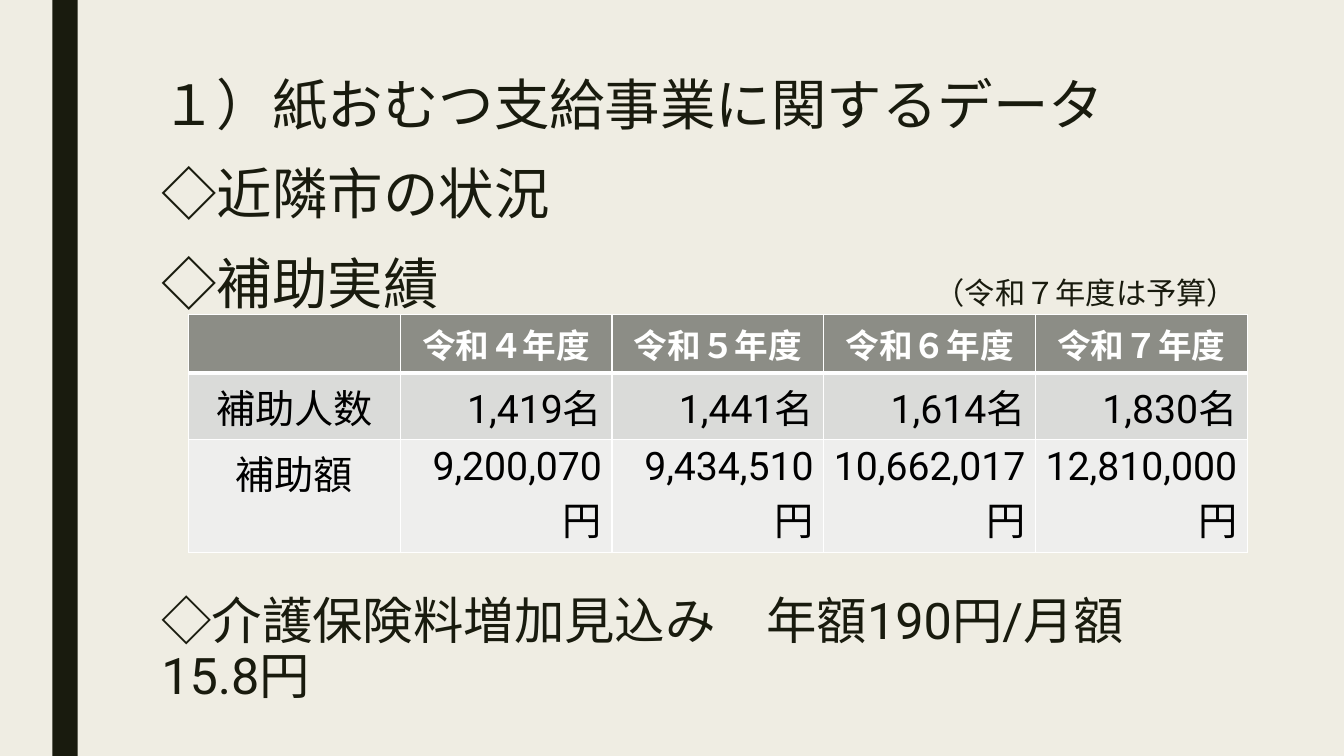
from lxml import etree
from pptx import Presentation
from pptx.dml.color import RGBColor
from pptx.enum.shapes import MSO_SHAPE
from pptx.enum.text import MSO_ANCHOR, PP_ALIGN
from pptx.oxml.ns import qn
from pptx.util import Inches, Pt

RECTANGLE = MSO_SHAPE.RECTANGLE
MIDDLE = MSO_ANCHOR.MIDDLE
LEFT, CENTER, RIGHT = PP_ALIGN.LEFT, PP_ALIGN.CENTER, PP_ALIGN.RIGHT

FONT = "Roboto"
COLORS = {
    "background": "EFEDE3",
    "ink": "191B0E",
    "header": "8C8D86",
    "people": "DADBD9",
    "amount": "EEEEED",
    "white": "FFFFFF",
    "black": "000000",
}


def write(frame, text, size=39.6, color="ink", bold=False, align=LEFT, spacing=None):
    for index, line in enumerate(text.split("\n")):
        para = frame.paragraphs[0] if index == 0 else frame.add_paragraph()
        para.alignment = align
        if spacing:
            para.line_spacing = Pt(spacing)
        span = para.add_run()
        span.text = line
        span.font.name = FONT
        span.font.size = Pt(size)
        span.font.bold = bold
        span.font.color.rgb = RGBColor.from_string(COLORS[color])


def add_border(cell, side, width):
    properties = cell._tc.get_or_add_tcPr()
    line = etree.SubElement(properties, qn(f"a:ln{side}"), w=str(Pt(width)))
    fill = etree.SubElement(line, qn("a:solidFill"))
    etree.SubElement(fill, qn("a:srgbClr"), val=COLORS["white"])


deck = Presentation()
deck.slide_width = Inches(13.33)
deck.slide_height = Inches(7.5)
page = deck.slides.add_slide(deck.slide_layouts[6])
page.background.fill.solid()
page.background.fill.fore_color.rgb = RGBColor.from_string(COLORS["background"])

stripe = page.shapes.add_shape(RECTANGLE, Inches(0.52), 0, Inches(0.25), Inches(7.5))
stripe.shadow.inherit = False
stripe.fill.solid()
stripe.fill.fore_color.rgb = RGBColor.from_string(COLORS["ink"])
stripe.line.fill.background()

texts = [
    ("１）紙おむつ支給事業に関するデータ", 1.6, 0.63, 10.5, 0.8, {}),
    ("◇近隣市の状況", 1.6, 1.51, 10.5, 0.8, {}),
    ("◇補助実績", 1.6, 2.4, 5, 0.8, {}),
    ("（令和７年度は予算）", 9.27, 2.65, 3.4, 0.5, {"size": 21.6}),
    ("◇介護保険料増加見込み　年額190円/月額15.8円", 1.6, 5.9, 10.5, 1.09,
     {"size": 36, "spacing": 39.3}),
]
for text, left, top, width, height, style in texts:
    box = page.shapes.add_textbox(Inches(left), Inches(top), Inches(width), Inches(height))
    frame = box.text_frame
    frame.word_wrap = True
    frame.vertical_anchor = MIDDLE
    frame.margin_left = frame.margin_right = frame.margin_top = frame.margin_bottom = 0
    write(frame, text, **style)

rows = [
    ("header", 0.58, ["", "令和４年度", "令和５年度", "令和６年度", "令和７年度"]),
    ("people", 0.66, ["補助人数", "1,419名", "1,441名", "1,614名", "1,830名"]),
    ("amount", 1.12, ["補助額", "9,200,070\n円", "9,434,510\n円",
                      "10,662,017\n円", "12,810,000\n円"]),
]
table = page.shapes.add_table(
    3, 5, Inches(1.87), Inches(3.12), Inches(10.5), Inches(2.36)).table
for column in table.columns:
    column.width = Inches(2.1)
for row, (kind, height, values) in enumerate(rows):
    table.rows[row].height = Inches(height)
    is_header = kind == "header"
    for column, value in enumerate(values):
        cell = table.cell(row, column)
        for side in "LRTB":
            thick = (row, side) in [(0, "B"), (1, "T")]
            add_border(cell, side, 3 if thick else 1)
        cell.fill.solid()
        cell.fill.fore_color.rgb = RGBColor.from_string(COLORS[kind])
        write(
            cell.text_frame, value,
            size=24 if is_header else 28,
            color="white" if is_header else "black",
            bold=is_header,
            align=CENTER if is_header or column == 0 else RIGHT,
        )

deck.save("out.pptx")
